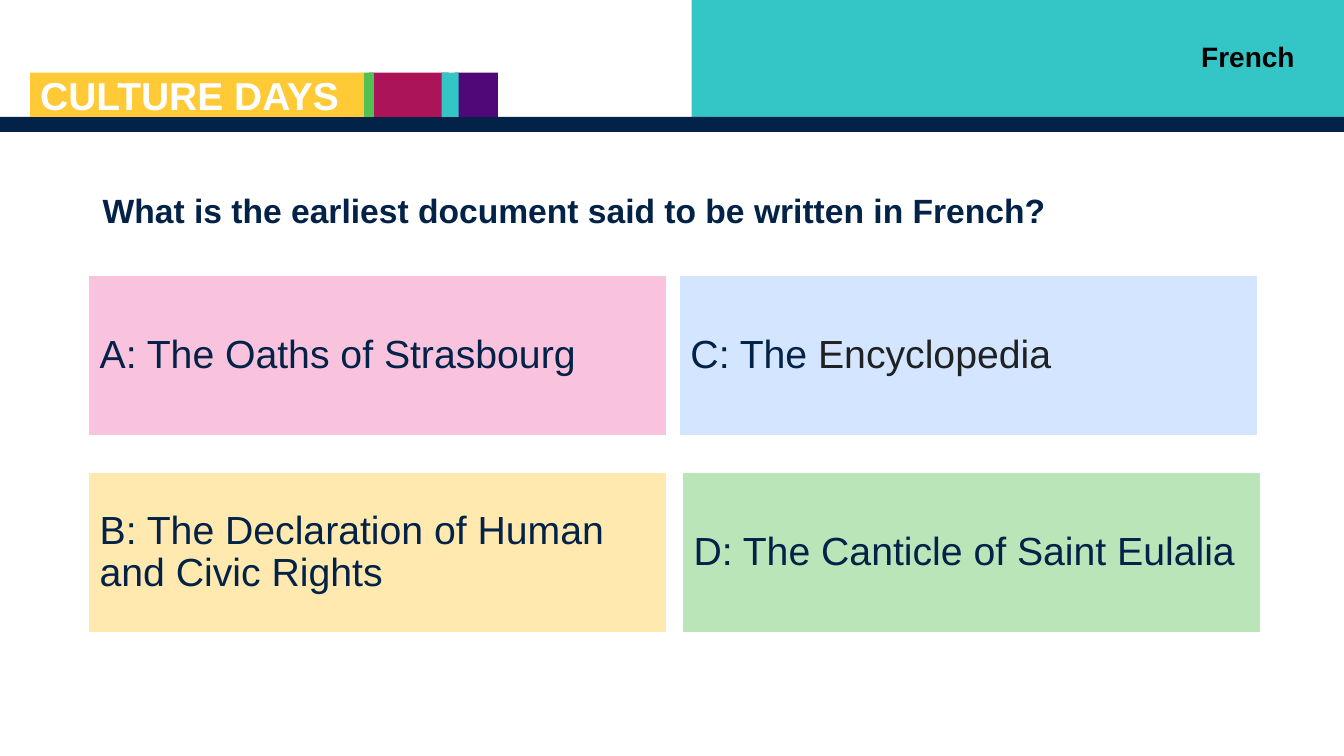
from pptx import Presentation
from pptx import util as u
from pptx.dml.color import RGBColor
from pptx.enum import shapes, text

COLOURS = {
    "navy": "032248", "teal": "34C6C6", "purple": "500778",
    "magenta": "AC145A", "green": "52C152", "yellow": "FFCA36",
    "white": "FFFFFF", "black": "000000", "charcoal": "202122",
    "pale pink": "F9C3DD", "pale blue": "D3E5FF",
    "pale yellow": "FFE9AE", "pale green": "B9E5B9",
}


def rgb(name):
    return RGBColor.from_string(COLOURS[name])


def add_block(slide, box, colour, outlined=False):
    block = slide.shapes.add_shape(
        shapes.MSO_SHAPE.RECTANGLE, *map(u.Inches, box))
    block.shadow.inherit = False
    block.fill.solid()
    block.fill.fore_color.rgb = rgb(colour)
    if outlined:
        block.line.color.rgb = rgb(colour)
        block.line.width = u.Pt(0.75)
    else:
        block.line.fill.background()
    return block


def write(holder, pieces, size, bold=False, spacing=1.0,
          align=text.PP_ALIGN.LEFT, anchor=text.MSO_ANCHOR.MIDDLE):
    frame = holder.text_frame
    frame.word_wrap = True
    frame.vertical_anchor = anchor
    line = frame.paragraphs[0]
    line.alignment = align
    line.line_spacing = spacing
    for wording, colour in pieces:
        run = line.add_run()
        run.text = wording
        run.font.name = "Arial"
        run.font.size = u.Pt(size)
        run.font.bold = bold
        run.font.color.rgb = rgb(colour)


def add_label(slide, box, wording, colour, size, **style):
    label = slide.shapes.add_textbox(*map(u.Inches, box))
    write(label, [(wording, colour)], size, bold=True, **style)


def add_header(slide, left, top, width, height):
    bar_height = 0.15
    bar_top = top + height - bar_height
    panel_left = left + 6.86
    add_block(slide, (panel_left, top, left + width - panel_left,
                      bar_top - top), "teal")
    add_block(slide, (left, bar_top, width, bar_height), "navy")

    stripe_height = 0.44
    stripes = [(4.51, 0.43, "purple"), (3.66, 0.79, "magenta"),
               (4.38, 0.17, "teal"), (3.61, 0.1, "green"),
               (0.3, 3.31, "yellow")]
    for offset, stripe_width, colour in stripes:
        add_block(slide, (left + offset, bar_top - stripe_height,
                          stripe_width, stripe_height), colour)

    add_label(slide, (left + 0.3, top + 0.75, 4.15, 0.48), "CULTURE DAYS",
              "white", 27.8, spacing=0.8, anchor=text.MSO_ANCHOR.TOP)
    add_label(slide, (left + width - 5.72, top + 0.34, 5.33, 0.44), "French",
              "black", 20, align=text.PP_ALIGN.RIGHT,
              anchor=text.MSO_ANCHOR.TOP)


def add_question(slide, left, top, width, height):
    add_label(slide, (left, top, width, height),
              "What is the earliest document said to be written in French?",
              "navy", 24, spacing=0.9)


def add_answers(slide, left, top, width, height):
    card_width, card_height = 5.71, 1.57
    lower = height - card_height
    right = width - card_width
    answers = [
        (0, 0, "pale pink", [("A: The Oaths of Strasbourg", "navy")]),
        (right - 0.03, 0, "pale blue",
         [("C: The ", "navy"), ("Encyclopedia", "charcoal")]),
        (0, lower, "pale yellow",
         [("B: The Declaration of Human and Civic Rights", "navy")]),
        (right, lower, "pale green",
         [("D: The Canticle of Saint Eulalia", "navy")]),
    ]
    for across, down, colour, pieces in answers:
        card = add_block(slide, (left + across, top + down,
                                 card_width, card_height), colour, True)
        write(card, pieces, 28, spacing=0.9)


def main():
    deck = Presentation()
    deck.slide_width = u.Inches(13.33)
    deck.slide_height = u.Inches(7.5)
    slide = deck.slides.add_slide(deck.slide_layouts[6])
    add_header(slide, 0, 0, 13.33, 1.31)
    add_question(slide, 0.92, 1.66, 11.5, 0.9)
    add_answers(slide, 0.89, 2.74, 11.6, 3.53)
    deck.save("out.pptx")


if __name__ == "__main__":
    main()
